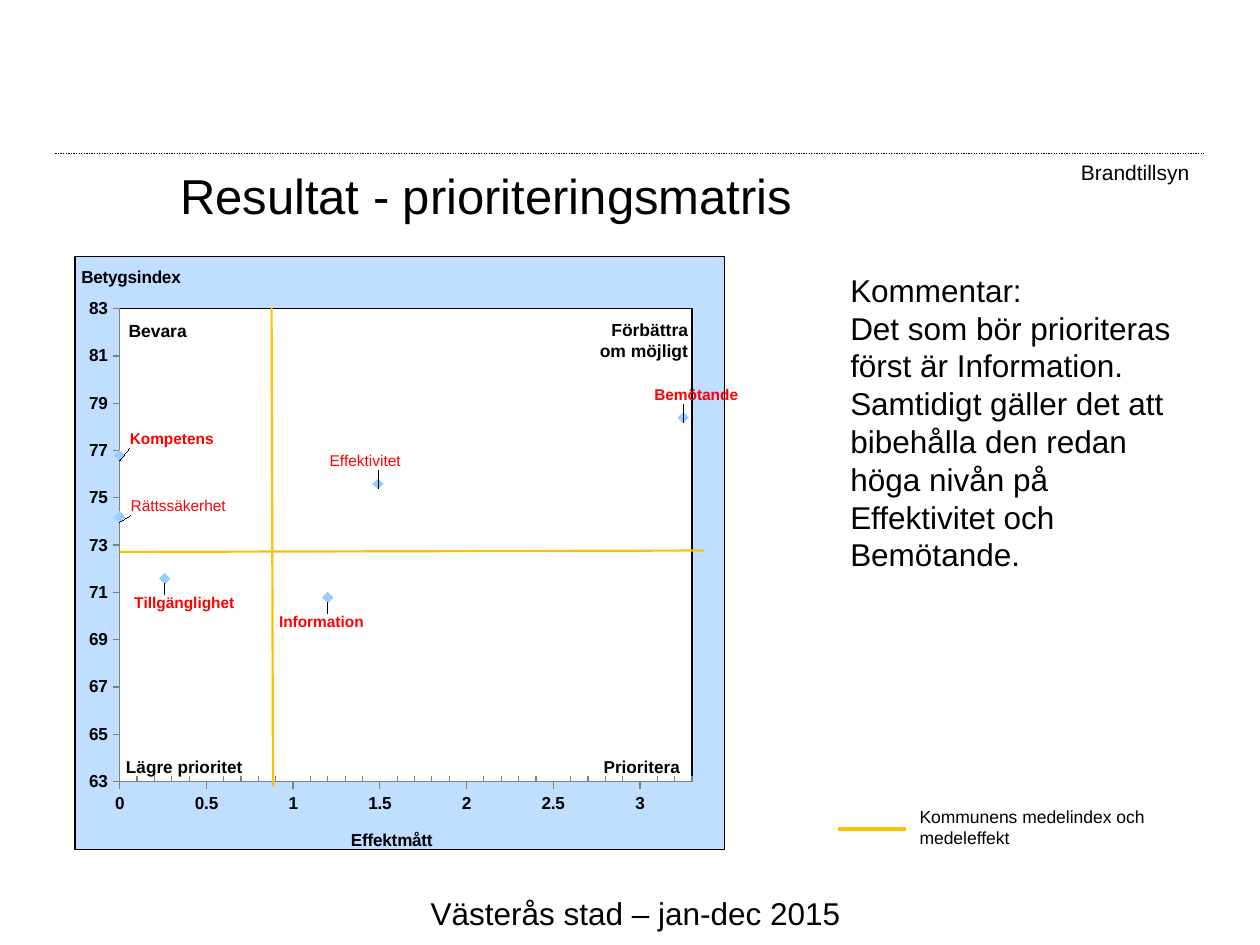
from dataclasses import dataclass

from pptx import Presentation
from pptx.chart.data import XyChartData
from pptx.dml.color import RGBColor
from pptx.enum.chart import XL_CHART_TYPE, XL_LABEL_POSITION, XL_MARKER_STYLE, XL_TICK_MARK
from pptx.enum.dml import MSO_LINE
from pptx.enum.shapes import MSO_CONNECTOR
from pptx.enum.text import MSO_ANCHOR, PP_ALIGN
from pptx.oxml import parse_xml
from pptx.oxml.ns import nsdecls, qn
from pptx.util import Pt

LEFT, RIGHT = PP_ALIGN.LEFT, PP_ALIGN.RIGHT
TOP, MIDDLE = MSO_ANCHOR.TOP, MSO_ANCHOR.MIDDLE
DOTTED = MSO_LINE.ROUND_DOT
FONT = "Arial"
COLORS = {
    "text": "000000",
    "mean": "FFC000",
    "label": "FF0000",
    "marker": "99CCFF",
    "chart": "C0DEFF",
    "plot": "FFFFFF",
    "axis": "808080",
}
WIDE_INSETS = (7.2, 3.6, 7.2, 3.6)
LEFT_INSETS = (2.2, 2.2, 0, 0)
RIGHT_INSETS = (0, 2.2, 2.2, 0)


@dataclass
class TextBox:
    left: float
    top: float
    width: float
    height: float
    size: float
    paragraphs: tuple[str, ...]
    bold: bool = False
    align: PP_ALIGN = LEFT
    anchor: MSO_ANCHOR = TOP
    wrap: bool = True
    insets: tuple[float, float, float, float] = WIDE_INSETS


@dataclass
class Line:
    start: tuple[float, float]
    end: tuple[float, float]
    width: float
    color: str = "mean"
    dash: MSO_LINE | None = None


@dataclass
class QualityPoint:
    """A measured area; the offset moves its label, as shares of the chart size."""
    name: str
    effect: float
    index: float
    offset: tuple[float, float]
    bold: bool = True


POINTS = [
    QualityPoint("Tillgänglighet", 0.26, 71.6, (0.03, 0.01)),
    QualityPoint("Information", 1.2, 70.8, (-0.01, 0.01)),
    QualityPoint("Bemötande", 3.25, 78.4, (0.02, -0.07)),
    QualityPoint("Kompetens", 0, 76.8, (0.08, -0.06)),
    QualityPoint("Rättssäkerhet", 0, 74.2, (0.09, -0.05), False),
    QualityPoint("Effektivitet", 1.49, 75.6, (-0.02, -0.07), False),
]
PAGE_TEXTS = [
    TextBox(239, 507.6, 250.6, 28.8, 18, ("Västerås stad – jan-dec 2015",), wrap=False),
    TextBox(95.8, 94.3, 544.3, 33.8, 28, ("Resultat - prioriteringsmatris",), anchor=MIDDLE),
    TextBox(518.4, 457.2, 175.7, 31.7, 10, ("Kommunens medelindex och medeleffekt",)),
    TextBox(478.8, 151.2, 213.1, 181.4, 18, (
        "Kommentar:",
        "Det som bör prioriteras först är Information. Samtidigt gäller det att "
        "bibehålla den redan höga nivån på Effektivitet och Bemötande.",
    )),
    TextBox(586.8, 87.8, 100, 36, 12, ("Brandtillsyn",), align=RIGHT, wrap=False),
]
QUADRANT_TEXTS = [
    TextBox(71.3, 180.7, 122.4, 56.9, 10, ("Bevara",), True, insets=LEFT_INSETS),
    TextBox(340.6, 180, 54.7, 28, 10, ("Förbättra om möjligt",), True, RIGHT,
            insets=RIGHT_INSETS),
    TextBox(342.7, 429.8, 50.4, 15.8, 9.8, ("Prioritera",), True, insets=LEFT_INSETS),
    TextBox(69.8, 430, 82.1, 15.8, 9.8, ("Lägre prioritet",), True, insets=LEFT_INSETS),
]
PAGE_LINES = [
    Line((688.3, 87.8), (31.7, 87.8), 0.75, "text", DOTTED),
    Line((478.8, 473.8), (517.7, 473.8), 2.25),
]
MEAN_LINES = [
    Line((155.2, 175.7), (156, 449.3), 1.25),
    Line((68.4, 315.4), (402.5, 314.6), 1.25),
]


def rgb(name: str) -> RGBColor:
    return RGBColor.from_string(COLORS[name])


def set_font(font, size: float, bold: bool = False, color: str = "text") -> None:
    font.name, font.size, font.bold = FONT, Pt(size), bold
    font.color.rgb = rgb(color)


def draw_text(slide, box: TextBox) -> None:
    shape = slide.shapes.add_textbox(Pt(box.left), Pt(box.top), Pt(box.width), Pt(box.height))
    frame = shape.text_frame
    frame.word_wrap = box.wrap
    frame.vertical_anchor = box.anchor
    (frame.margin_left, frame.margin_top,
     frame.margin_right, frame.margin_bottom) = map(Pt, box.insets)
    for number, text in enumerate(box.paragraphs):
        paragraph = frame.add_paragraph() if number else frame.paragraphs[0]
        paragraph.alignment = box.align
        run = paragraph.add_run()
        run.text = text
        set_font(run.font, box.size, box.bold)


def draw_line(slide, line: Line) -> None:
    connector = slide.shapes.add_connector(
        MSO_CONNECTOR.STRAIGHT, *map(Pt, line.start), *map(Pt, line.end))
    connector.line.color.rgb = rgb(line.color)
    connector.line.width = Pt(line.width)
    if line.dash is not None:
        connector.line.dash_style = line.dash
    connector._element.spPr.append(parse_xml(f"<a:effectLst {nsdecls('a')}/>"))


def manual_layout(x: float, y: float, size: tuple[float, float] | None = None,
                  edge: bool = True):
    """Return a c:layout; without edge, x and y are offsets from the usual place."""
    values = [("xMode", "edge"), ("yMode", "edge")] if edge else []
    values += [("x", x), ("y", y)]
    if size:
        values = [("layoutTarget", "inner"), *values, ("w", size[0]), ("h", size[1])]
    parts = "".join(f'<c:{tag} val="{value}"/>' for tag, value in values)
    return parse_xml(f"<c:layout {nsdecls('c')}><c:manualLayout>{parts}"
                     "</c:manualLayout></c:layout>")


def replace_layout(parent, layout, after: str | None = None) -> None:
    for old in parent.findall(qn("c:layout")):
        parent.remove(old)
    if after:
        parent.find(qn(after)).addnext(layout)
    else:
        parent.insert(0, layout)


def area_format(fill: str):
    return parse_xml(
        f"<c:spPr {nsdecls('c', 'a')}><a:solidFill><a:srgbClr val=\"{COLORS[fill]}\"/></a:solidFill>"
        f'<a:ln w="{Pt(0.75)}"><a:solidFill><a:srgbClr val="{COLORS["text"]}"/></a:solidFill>'
        "</a:ln></c:spPr>")


def format_axis(axis, title: str, scale: tuple[float, float, float],
                place: tuple[float, float]) -> None:
    axis.minimum_scale, axis.maximum_scale, axis.major_unit = scale
    axis.has_major_gridlines = False
    axis.major_tick_mark = XL_TICK_MARK.OUTSIDE
    axis.minor_tick_mark = XL_TICK_MARK.NONE
    axis.tick_labels.number_format = "General"
    axis.tick_labels.number_format_is_linked = False
    set_font(axis.tick_labels.font, 10, True)
    axis.format.line.color.rgb = rgb("axis")
    frame = axis.axis_title.text_frame
    run = frame.paragraphs[0].add_run()
    run.text = title
    set_font(run.font, 10, True)
    frame._txBody.bodyPr.set("rot", "0")
    replace_layout(axis.axis_title._element, manual_layout(*place), "c:tx")


def draw_matrix(slide) -> None:
    data = XyChartData()
    measured = data.add_series("Series 1")
    for point in POINTS:
        measured.add_data_point(point.effect, point.index)
    chart = slide.shapes.add_chart(
        XL_CHART_TYPE.XY_SCATTER, Pt(42.5), Pt(146.2), Pt(379.4), Pt(342.7), data).chart
    chart.has_title = chart.has_legend = False
    set_font(chart.font, 18)
    format_axis(chart.category_axis, "Effektmått", (0, 3.3, 0.5), (0.42, 0.96))
    chart.category_axis.minor_unit = 0.1
    chart.category_axis.minor_tick_mark = XL_TICK_MARK.INSIDE
    format_axis(chart.value_axis, "Betygsindex", (63, 83, 2), (0.005, 0.01))

    plot = chart.plots[0]
    plot.vary_by_categories = False
    series = plot.series[0]
    series.format.line.fill.background()
    series.marker.style, series.marker.size = XL_MARKER_STYLE.DIAMOND, 6
    series.marker.format.fill.solid()
    series.marker.format.fill.fore_color.rgb = rgb("marker")
    series.marker.format.line.color.rgb = rgb("marker")
    for number, point in enumerate(POINTS):
        label = series.points[number].data_label
        run = label.text_frame.paragraphs[0].add_run()
        run.text = point.name
        set_font(run.font, 9, point.bold, "label")
        label.position = XL_LABEL_POSITION.BELOW
        replace_layout(label._get_or_add_dLbl(),
                       manual_layout(*point.offset, edge=False), "c:idx")

    chart_element = chart._chartSpace.chart
    replace_layout(chart_element.plotArea, manual_layout(0.069, 0.088, (0.881, 0.798)))
    chart_element.plotArea.append(area_format("plot"))
    chart_element.addnext(area_format("chart"))


def main() -> None:
    presentation = Presentation()
    presentation.slide_width, presentation.slide_height = Pt(720), Pt(540)
    slide = presentation.slides.add_slide(presentation.slide_layouts[6])
    for line in PAGE_LINES:
        draw_line(slide, line)
    for box in PAGE_TEXTS:
        draw_text(slide, box)
    draw_matrix(slide)
    for line in MEAN_LINES:
        draw_line(slide, line)
    for box in QUADRANT_TEXTS:
        draw_text(slide, box)
    presentation.save("out.pptx")


if __name__ == "__main__":
    main()
